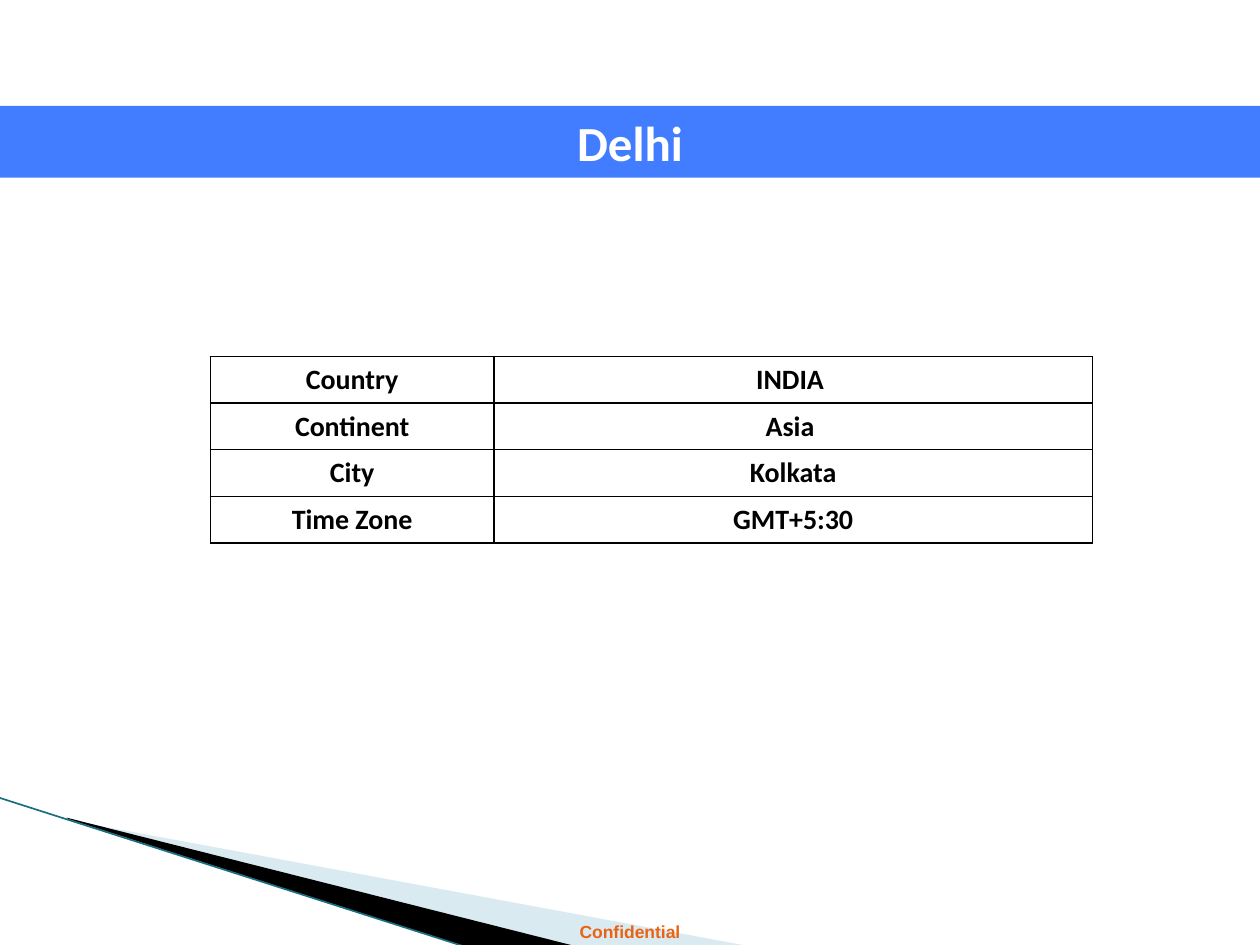
from lxml.etree import SubElement
from pptx import Presentation
from pptx.dml.color import RGBColor
from pptx.enum.shapes import MSO_CONNECTOR, MSO_SHAPE
from pptx.enum.text import MSO_ANCHOR, PP_ALIGN
from pptx.oxml.ns import qn
from pptx.util import Inches, Pt

WIDTH, HEIGHT = 10, 7.5
TITLE_FORMAT = {"name": "Calibri", "size": Pt(28), "bold": True}
FOOTER_FORMAT = {"name": "Arial", "size": Pt(10), "bold": True}
CELL_FORMAT = {"name": "Calibri", "size": Pt(16), "bold": True}

FACTS = [
    ("Country", "INDIA "),
    ("Continent", "Asia "),
    ("City", "Kolkata"),
    ("Time Zone", "GMT+5:30"),
]
COLUMN_WIDTHS = (2.25, 4.75)
ROW_HEIGHT = 0.37

PALE_WEDGE = [(0.55, 6.51), (5.95, 7.51), (4.56, 7.51), (0.55, 6.5)]
BLACK_WEDGE = [(0.53, 6.49), (4.57, 7.51), (3.72, 7.52), (0.54, 6.5)]


def set_color(color_format, hex_color):
    color_format.rgb = RGBColor.from_string(hex_color)


def set_fill(fill, hex_color):
    fill.solid()
    set_color(fill.fore_color, hex_color)


def write_centred(frame, text, font_format, hex_color):
    frame.word_wrap = True
    paragraph = frame.paragraphs[0]
    paragraph.alignment = PP_ALIGN.CENTER
    run = paragraph.add_run()
    run.text = text
    for attribute, value in font_format.items():
        setattr(run.font, attribute, value)
    set_color(run.font.color, hex_color)


def add_wedge(slide, corners, hex_color, opacity=100):
    start, *others = [(Inches(x), Inches(y)) for x, y in corners]
    builder = slide.shapes.build_freeform(*start)
    builder.add_line_segments(others, close=True)
    wedge = builder.convert_to_shape()
    wedge.shadow.inherit = False
    wedge.line.fill.background()
    set_fill(wedge.fill, hex_color)
    if opacity < 100:
        color = wedge.fill._xPr.find(qn("a:solidFill"))[0]
        SubElement(color, qn("a:alpha"), val=str(opacity * 1000))


def add_edge_line(slide, start, end, hex_color, width):
    edge = slide.shapes.add_connector(
        MSO_CONNECTOR.STRAIGHT, *(Inches(length) for length in start + end))
    set_color(edge.line.color, hex_color)
    edge.line.width = Pt(width)
    SubElement(edge._element.spPr, qn("a:effectLst"))


def add_footer(slide, text):
    footer = slide.shapes.add_textbox(
        0, Inches(7.26), Inches(WIDTH), Inches(0.27))
    write_centred(footer.text_frame, text, FOOTER_FORMAT, "EB6312")


def add_title_band(slide, text):
    band = slide.shapes.add_shape(
        MSO_SHAPE.RECTANGLE, 0, Inches(0.84), Inches(WIDTH), Inches(0.57))
    band.shadow.inherit = False
    band.line.fill.background()
    set_fill(band.fill, "437DFF")
    band.text_frame.vertical_anchor = MSO_ANCHOR.MIDDLE
    write_centred(band.text_frame, text, TITLE_FORMAT, "FFFFFF")


def add_borders(cell, hex_color, width):
    properties = cell._tc.get_or_add_tcPr()
    for position, side in enumerate(("lnL", "lnR", "lnT", "lnB")):
        border = properties.makeelement(
            qn(f"a:{side}"), {"w": str(Pt(width))})
        fill = SubElement(border, qn("a:solidFill"))
        SubElement(fill, qn("a:srgbClr"), val=hex_color)
        properties.insert(position, border)


def add_fact_table(slide, facts):
    table = slide.shapes.add_table(
        len(facts), len(COLUMN_WIDTHS), Inches(1.67), Inches(2.83),
        Inches(sum(COLUMN_WIDTHS)), Inches(ROW_HEIGHT * len(facts))).table
    table.first_row = table.horz_banding = False
    for column, width in zip(table.columns, COLUMN_WIDTHS):
        column.width = Inches(width)
    for row, fact in zip(table.rows, facts):
        for cell, text in zip(row.cells, fact):
            cell.fill.background()
            cell.vertical_anchor = MSO_ANCHOR.MIDDLE
            write_centred(cell.text_frame, text, CELL_FORMAT, "000000")
            add_borders(cell, "000000", 1)


def main():
    presentation = Presentation()
    presentation.slide_width = Inches(WIDTH)
    presentation.slide_height = Inches(HEIGHT)
    slide = presentation.slides.add_slide(presentation.slide_layouts[6])

    add_wedge(slide, PALE_WEDGE, "A0CBDC", opacity=40)
    add_wedge(slide, BLACK_WEDGE, "000000")
    add_edge_line(slide, (-0.01, 6.33), (3.71, 7.52), "1B6D82", 0.95)
    add_footer(slide, "Confidential")
    add_title_band(slide, "Delhi")
    add_fact_table(slide, FACTS)

    presentation.save("out.pptx")


if __name__ == "__main__":
    main()
